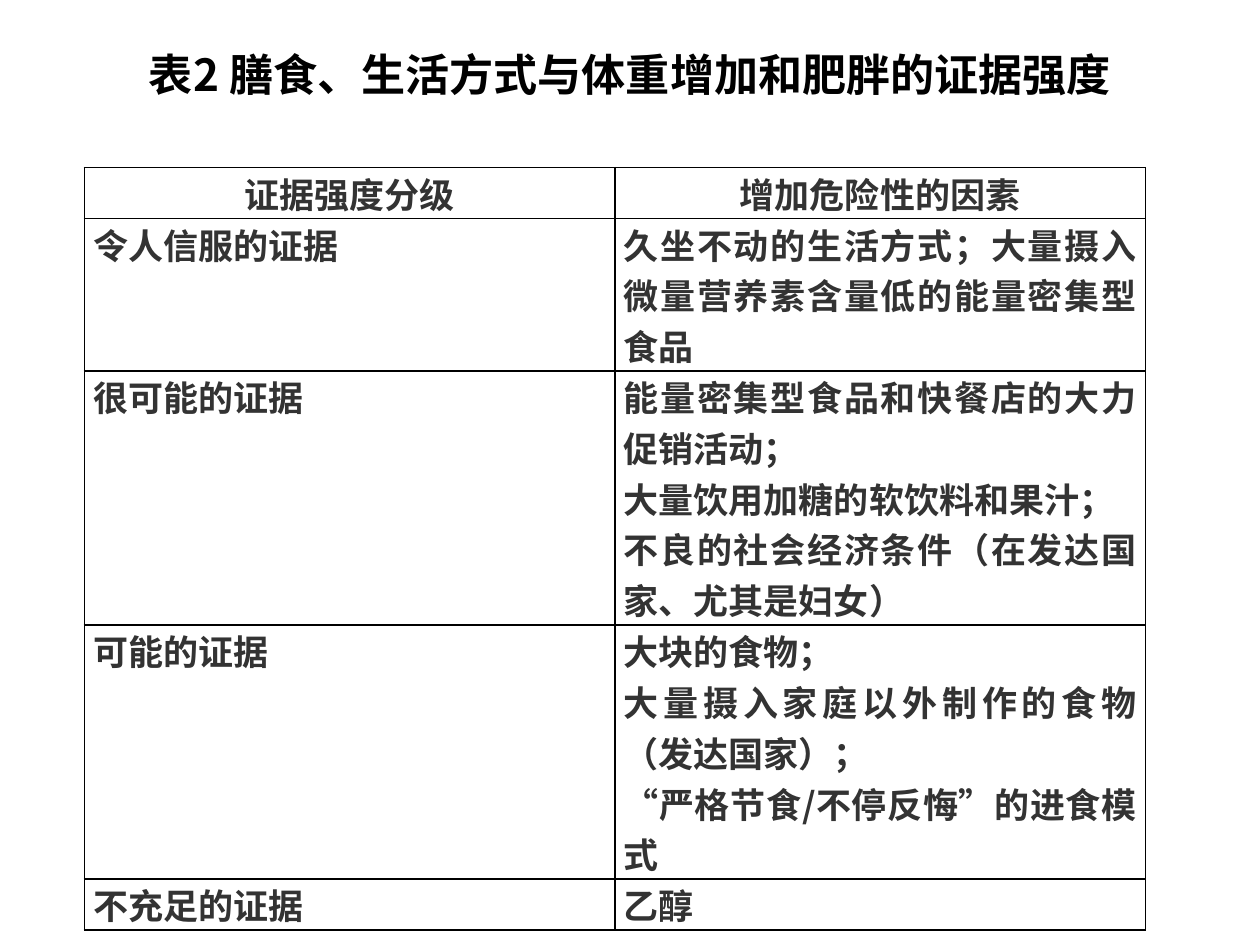
import pptx
import pptx.dml.color
import pptx.enum.lang
import pptx.enum.text
import pptx.oxml
import pptx.oxml.ns
import pptx.util
from pptx.util import Inches

BLACK = pptx.dml.color.RGBColor(0x00, 0x00, 0x00)
DARK_GRAY = pptx.dml.color.RGBColor(0x33, 0x33, 0x33)
FONT = "Noto Sans CJK SC"
ALIGN = pptx.enum.text.PP_ALIGN

TITLE = "表2 膳食、生活方式与体重增加和肥胖的证据强度"
EVIDENCE_ROWS = [
    ("证据强度分级", ["增加危险性的因素"]),
    ("令人信服的证据", ["久坐不动的生活方式；大量摄入微量营养素含量低的能量密集型食品"]),
    ("很可能的证据", [
        "能量密集型食品和快餐店的大力促销活动；",
        "大量饮用加糖的软饮料和果汁；",
        "不良的社会经济条件（在发达国家、尤其是妇女）",
    ]),
    ("可能的证据", [
        "大块的食物；",
        "大量摄入家庭以外制作的食物（发达国家）；",
        "“严格节食/不停反悔”的进食模式",
    ]),
    ("不充足的证据", ["乙醇"]),
]
LINES_PER_ROW = [1, 3, 5, 5, 1]
TABLE_HEIGHT = 6.05


def write_text(text_frame, paragraphs, size=20, color=DARK_GRAY, align=ALIGN.JUSTIFY):
    text_frame.word_wrap = True
    for index, text in enumerate(paragraphs):
        paragraph = text_frame.paragraphs[0] if index == 0 else text_frame.add_paragraph()
        paragraph.alignment = align
        run = paragraph.add_run()
        run.text = text
        font = run.font
        font.name, font.size, font.bold = FONT, pptx.util.Pt(size), True
        font.color.rgb = color
        font.language_id = pptx.enum.lang.MSO_LANGUAGE_ID.SIMPLIFIED_CHINESE
        east_asian = pptx.oxml.parse_xml(
            f'<a:ea {pptx.oxml.ns.nsdecls("a")} typeface="{FONT}"/>')
        run._r.get_or_add_rPr().append(east_asian)


class SlideBuilder:
    """Holds the border style and the slide being built."""

    def __init__(self, slide, border_color=BLACK, border_width=1):
        self.slide = slide
        self.border_color = border_color
        self.border_width = pptx.util.Pt(border_width)

    def add_title(self, text, left, top, width, height):
        shape = self.slide.shapes.add_textbox(left, top, width, height)
        shape.text_frame.vertical_anchor = pptx.enum.text.MSO_ANCHOR.TOP
        shape.text_frame.margin_top = Inches(0.08)
        write_text(shape.text_frame, [text], size=25.2, color=BLACK, align=ALIGN.CENTER)

    def add_evidence_table(self, rows, lines_per_row, left, top, width, height):
        """Add the table, sharing its height among rows by their line counts."""
        shape = self.slide.shapes.add_table(len(rows), 2, left, top, width, height)
        table = shape.table
        table.first_row = table.horz_banding = False
        line_height = height / sum(lines_per_row)
        for row_index, (grade, factors) in enumerate(rows):
            table.rows[row_index].height = round(line_height * lines_per_row[row_index])
            align = ALIGN.CENTER if row_index == 0 else ALIGN.JUSTIFY
            for column_index, paragraphs in enumerate(([grade], factors)):
                cell = table.cell(row_index, column_index)
                cell.margin_left = cell.margin_right = Inches(0.07)
                cell.margin_top = cell.margin_bottom = 0
                cell.fill.background()
                self.add_borders(cell)
                write_text(cell.text_frame, paragraphs, align=align)

    def add_borders(self, cell):
        properties = cell._tc.get_or_add_tcPr()
        for index, side in enumerate("LRTB"):
            properties.insert(index, pptx.oxml.parse_xml(
                f'<a:ln{side} {pptx.oxml.ns.nsdecls("a")} w="{self.border_width}">'
                f'<a:solidFill><a:srgbClr val="{self.border_color}"/></a:solidFill>'
                f'</a:ln{side}>'))


def main():
    presentation = pptx.Presentation()
    presentation.slide_width, presentation.slide_height = Inches(10), Inches(7.5)
    builder = SlideBuilder(presentation.slides.add_slide(presentation.slide_layouts[6]))
    builder.add_title(TITLE, Inches(0.5), Inches(0.3), Inches(9), Inches(1.25))
    builder.add_evidence_table(EVIDENCE_ROWS, LINES_PER_ROW, Inches(0.67), Inches(1.33),
                               Inches(8.42), Inches(TABLE_HEIGHT))
    presentation.save("out.pptx")


if __name__ == "__main__":
    main()
